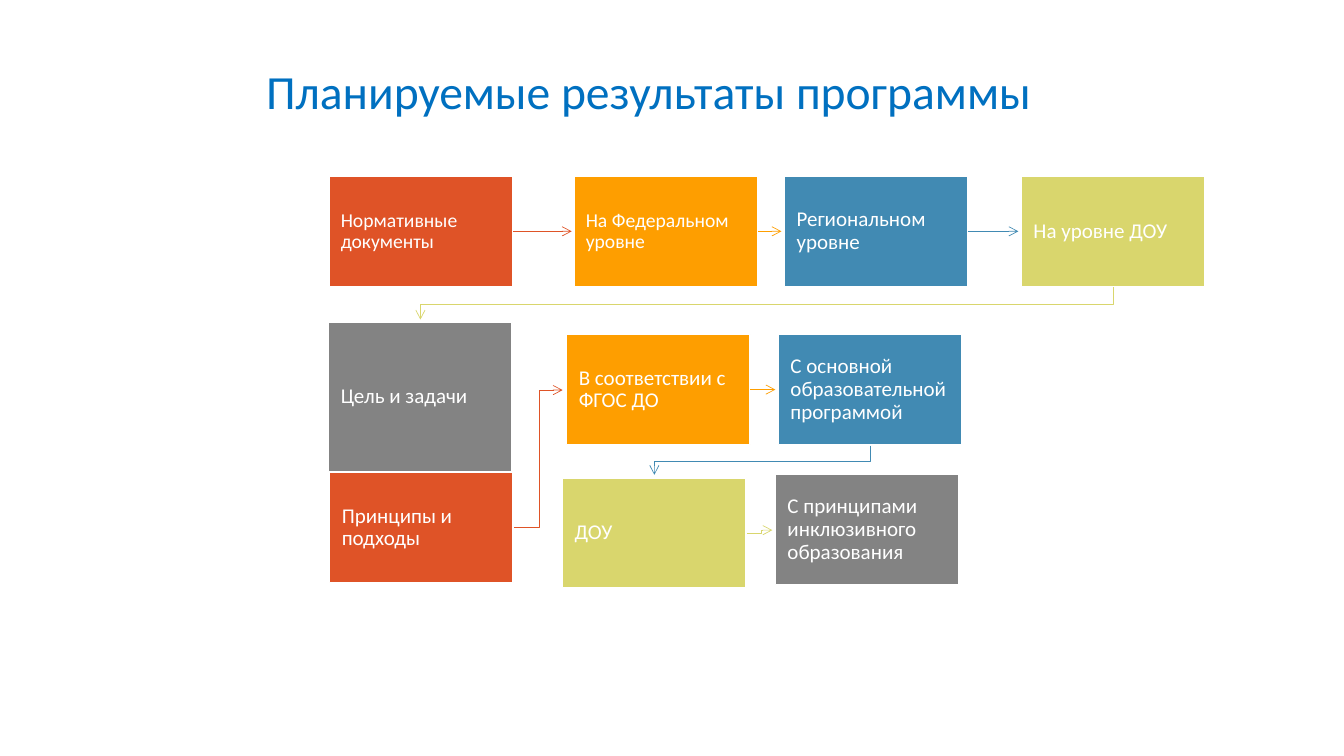
from lxml import etree
from pptx import Presentation
from pptx.dml.color import RGBColor
from pptx.enum import shapes, text
from pptx.oxml.ns import qn
from pptx.util import Inches, Pt

COLOURS = {
    "title": "0070C0",
    "white": "FFFFFF",
    "red": "DF5327",
    "orange": "FE9E00",
    "blue": "418AB3",
    "lime": "D9D66D",
    "grey": "838383",
}
TOP, RIGHT, BOTTOM = 0, 3, 2
STEP_WIDTH, STEP_HEIGHT = 1.82, 1.09
ARROW_GAP = 0.03


def colour(name):
    return RGBColor.from_string(COLOURS[name])


def write(frame, wording, *, size, ink, anchor, inset=0.1):
    """Fill a text frame with one left-aligned paragraph."""
    frame.word_wrap = True
    frame.auto_size = text.MSO_AUTO_SIZE.NONE
    frame.vertical_anchor = anchor
    frame.margin_left = frame.margin_right = Inches(inset)
    frame.margin_top = frame.margin_bottom = Inches(inset)
    paragraph = frame.paragraphs[0]
    paragraph.alignment = text.PP_ALIGN.LEFT
    paragraph.line_spacing = 0.9
    run = paragraph.add_run()
    run.text = wording
    run.font.name = "Calibri"
    run.font.size = Pt(size)
    run.font.color.rgb = colour(ink)


class ProcessSlide:
    def __init__(self, slide):
        self.slide = slide

    def title(self, wording):
        heading = self.slide.shapes.title
        heading.left, heading.top = Inches(2.56), Inches(0.33)
        heading.width, heading.height = Inches(10.11), Inches(0.94)
        write(heading.text_frame, wording, size=34, ink="title",
              anchor=text.MSO_ANCHOR.BOTTOM, inset=0.08)

    def step(self, wording, left, top, fill, height=STEP_HEIGHT, size=15):
        box = self.slide.shapes.add_shape(
            shapes.MSO_SHAPE.RECTANGLE, Inches(left), Inches(top),
            Inches(STEP_WIDTH), Inches(height))
        box.shadow.inherit = False
        box.fill.solid()
        box.fill.fore_color.rgb = colour(fill)
        box.line.color.rgb = colour("white")
        box.line.width = Pt(1)
        write(box.text_frame, wording, size=size, ink="white",
              anchor=text.MSO_ANCHOR.MIDDLE, inset=0.11 if size == 14 else 0.12)
        return box

    def arrow(self, source, target, ink):
        """Draw a straight arrow that stops just short of the target."""
        middle = source.top + source.height // 2
        link = self.slide.shapes.add_connector(
            shapes.MSO_CONNECTOR.STRAIGHT, source.left + source.width, middle,
            target.left - Inches(ARROW_GAP), middle)
        link.begin_connect(source, RIGHT)
        etree.SubElement(link._element.spPr, qn("a:effectLst"))
        self.style_arrow(link, ink)

    def bent_arrow(self, points, ink):
        corners = [(Inches(x), Inches(y)) for x, y in points]
        builder = self.slide.shapes.build_freeform(*corners[0])
        builder.add_line_segments(corners[1:], close=False)
        route = builder.convert_to_shape()
        route.shadow.inherit = False
        route.fill.background()
        self.style_arrow(route, ink)

    def style_arrow(self, link, ink):
        link.line.color.rgb = colour(ink)
        link.line.width = Pt(0.5)
        etree.SubElement(link.line._get_or_add_ln(), qn("a:tailEnd"), type="arrow")


def main():
    deck = Presentation()
    deck.slide_width, deck.slide_height = Inches(13.33), Inches(7.5)
    page = ProcessSlide(deck.slides.add_slide(deck.slide_layouts[5]))
    page.title("Планируемые результаты программы")

    documents = page.step("Нормативные документы", 3.27, 1.75, "red", size=14)
    federal = page.step("На Федеральном уровне", 5.7, 1.75, "orange", size=14)
    regional = page.step("Региональном уровне", 7.78, 1.75, "blue")
    local = page.step("На уровне ДОУ", 10.13, 1.75, "lime")
    page.step("Цель и задачи", 3.26, 3.2, "grey", height=1.48)
    page.step("Принципы и подходы", 3.27, 4.69, "red")
    standard = page.step("В соответствии с ФГОС ДО", 5.62, 3.32, "orange")
    programme = page.step("С основной образовательной программой", 7.72, 3.32, "blue")
    page.step("ДОУ", 5.58, 4.74, "lime")
    page.step("С принципами инклюзивного образования", 7.69, 4.71, "grey")

    for source, target, ink in (
        (documents, federal, "red"),
        (federal, regional, "orange"),
        (regional, local, "blue"),
        (standard, programme, "orange"),
    ):
        page.arrow(source, target, ink)

    for points, ink in (
        ([(11.04, 2.85), (11.04, 3.02), (4.17, 3.02), (4.17, 3.17)], "lime"),
        ([(5.1, 5.23), (5.35, 5.23), (5.35, 3.87), (5.58, 3.87)], "red"),
        ([(8.63, 4.42), (8.63, 4.58), (6.49, 4.58), (6.49, 4.71)], "blue"),
        ([(7.41, 5.29), (7.55, 5.29), (7.55, 5.26), (7.66, 5.26)], "lime"),
    ):
        page.bent_arrow(points, ink)

    deck.save("out.pptx")


if __name__ == "__main__":
    main()
